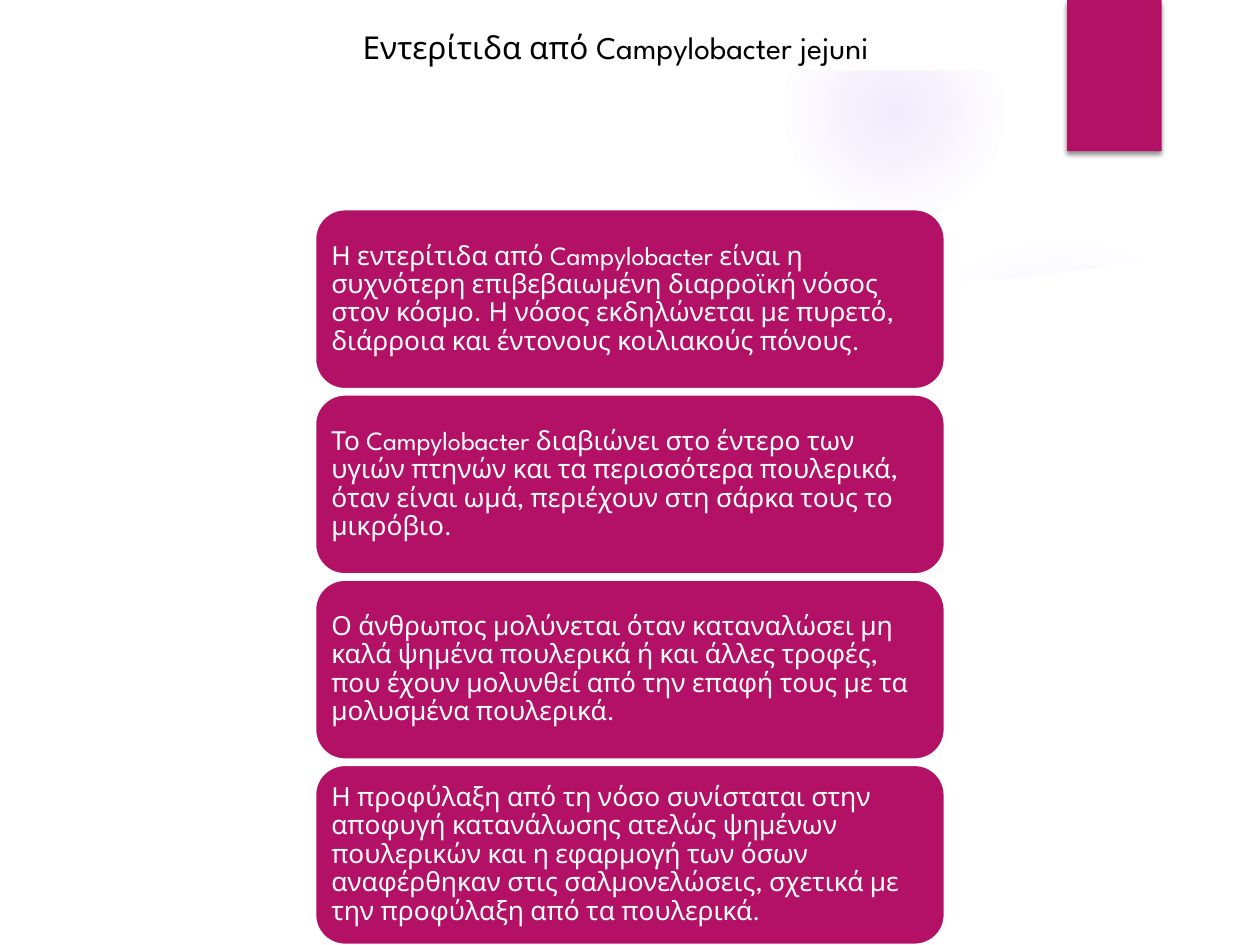
import pptx
import pptx.dml.color
import pptx.enum.shapes
import pptx.enum.text
import pptx.oxml
import pptx.oxml.ns
import pptx.util

Inches = pptx.util.Inches
SHAPE = pptx.enum.shapes.MSO_SHAPE
ANCHOR = pptx.enum.text.MSO_ANCHOR
ALIGN = pptx.enum.text.PP_ALIGN
FONT = "League Spartan"
MAGENTA, WHITE, BLACK, VIOLET = "B31166", "FFFFFF", "000000", "9B6BF2"

TITLE = "Εντερίτιδα από Campylobacter jejuni"
CARDS = [
    "Η εντερίτιδα από Campylobacter είναι η συχνότερη επιβεβαιωμένη διαρροϊκή νόσος "
    "στον κόσμο. Η νόσος εκδηλώνεται με πυρετό, διάρροια και έντονους κοιλιακούς πόνους.",
    "Το Campylobacter διαβιώνει στο έντερο των υγιών πτηνών και τα περισσότερα "
    "πουλερικά, όταν είναι ωμά, περιέχουν στη σάρκα τους το μικρόβιο.",
    "Ο άνθρωπος μολύνεται όταν καταναλώσει μη καλά ψημένα πουλερικά ή και άλλες τροφές, "
    "που έχουν μολυνθεί από την επαφή τους με τα μολυσμένα πουλερικά.",
    "Η προφύλαξη από τη νόσο συνίσταται στην αποφυγή κατανάλωσης ατελώς ψημένων "
    "πουλερικών και η εφαρμογή των όσων αναφέρθηκαν στις σαλμονελώσεις, σχετικά με "
    "την προφύλαξη από τα πουλερικά.",
]
# Upper edge of the white panel, as offsets from its top left corner
PANEL_EDGE = [(0, 0), (0.79, 0.1), (1.69, 0.19), (2.54, 0.25), (3.51, 0.3),
              (4.58, 0.31), (5.72, 0.3), (6.91, 0.24), (7.72, 0.16), (8.94, 0)]


def color(value):
    return pptx.dml.color.RGBColor.from_string(value)


def paint(sp, fill, line=None):
    sp.shadow.inherit = False
    sp.fill.solid()
    sp.fill.fore_color.rgb = color(fill)
    if line:
        sp.line.color.rgb = color(line)
        sp.line.width = pptx.util.Pt(1.5)
    else:
        sp.line.fill.background()


def add_box(slide, kind, box, fill, line=None):
    sp = slide.shapes.add_shape(kind, *map(Inches, box))
    paint(sp, fill, line)
    return sp


def write(sp, text, font_color, size, frame, line_spacing=1.0):
    tf = sp.text_frame
    for name, value in frame.items():
        setattr(tf, name, value)
    p = tf.paragraphs[0]
    p.alignment = ALIGN.LEFT
    p.line_spacing = line_spacing
    r = p.add_run()
    r.text = text
    for name, value in {"name": FONT, "size": pptx.util.Pt(size)}.items():
        setattr(r.font, name, value)
    r.font.color.rgb = color(font_color)


def add_glow(slide, box, stops):
    """Violet disc fading outwards; stops are (position, opacity) in percent."""
    sp = add_box(slide, SHAPE.OVAL, box, VIOLET)
    marks = "".join(
        f'<a:gs pos="{pos * 1000}"><a:srgbClr val="{VIOLET}">'
        f'<a:alpha val="{opacity * 1000}"/></a:srgbClr></a:gs>'
        for pos, opacity in stops)
    grad = pptx.oxml.parse_xml(
        f'<a:gradFill {pptx.oxml.ns.nsdecls("a")}><a:gsLst>{marks}</a:gsLst>'
        '<a:path path="circle"><a:fillToRect l="50000" t="50000" r="50000" b="50000"/>'
        '</a:path></a:gradFill>')
    props = sp.element.spPr
    props.replace(props.find(pptx.oxml.ns.qn("a:solidFill")), grad)


def add_panel(slide, box):
    left, top, width, height = box
    corners = PANEL_EDGE + [(width, height), (0, height)]
    points = [(Inches(left + x), Inches(top + y)) for x, y in corners]
    builder = slide.shapes.build_freeform(*points[0])
    builder.add_line_segments(points[1:])
    paint(builder.convert_to_shape(), WHITE)


def add_background(slide):
    add_glow(slide, (6.89, 1.83, 3.08, 3.08), [(0, 7), (36, 6), (69, 0)])
    add_glow(slide, (6.22, 0, 1.75, 1.75), [(0, 14), (36, 7), (73, 0)])
    add_panel(slide, (0.53, 2.03, 8.94, 4.96))
    add_box(slide, SHAPE.RECTANGLE, (0, 0, 10, 0.56), WHITE)
    add_box(slide, SHAPE.RECTANGLE, (9.45, 0.56, 0.55, 6.94), WHITE)


def add_bookmark(slide, box):
    sp = add_box(slide, SHAPE.RECTANGLE, box, MAGENTA)
    effects = sp.element.spPr.find(pptx.oxml.ns.qn("a:effectLst"))
    effects.append(pptx.oxml.parse_xml(
        f'<a:outerShdw {pptx.oxml.ns.nsdecls("a")} blurRad="38100" dist="25400" '
        f'dir="5400000" rotWithShape="0"><a:srgbClr val="{BLACK}">'
        '<a:alpha val="45000"/></a:srgbClr></a:outerShdw>'))


def add_title(slide, box):
    sp = slide.shapes.add_textbox(*map(Inches, box))
    write(sp, TITLE, BLACK, 18, {"word_wrap": False})


def add_cards(slide, box):
    left, top, width, height = box
    gap = 0.04
    card_height = (height - gap * (len(CARDS) - 1)) / len(CARDS)
    margin = Inches(0.06)
    frame = {"word_wrap": True, "vertical_anchor": ANCHOR.MIDDLE,
             "margin_left": margin, "margin_right": margin,
             "margin_top": margin, "margin_bottom": margin}
    for i, text in enumerate(CARDS):
        card = (left, top + i * (card_height + gap), width, card_height)
        sp = add_box(slide, SHAPE.ROUNDED_RECTANGLE, card, MAGENTA, WHITE)
        write(sp, text, WHITE, 15, frame, 0.9)


def main():
    prs = pptx.Presentation()
    prs.slide_width, prs.slide_height = Inches(10), Inches(7.5)
    slide = prs.slides.add_slide(prs.slide_layouts[6])
    add_background(slide)
    add_bookmark(slide, (8.47, 0, 0.75, 1.2))
    add_cards(slide, (2.5, 1.66, 5, 5.84))
    add_title(slide, (2.78, 0.17, 4.68, 0.4))
    prs.save("out.pptx")


if __name__ == "__main__":
    main()
